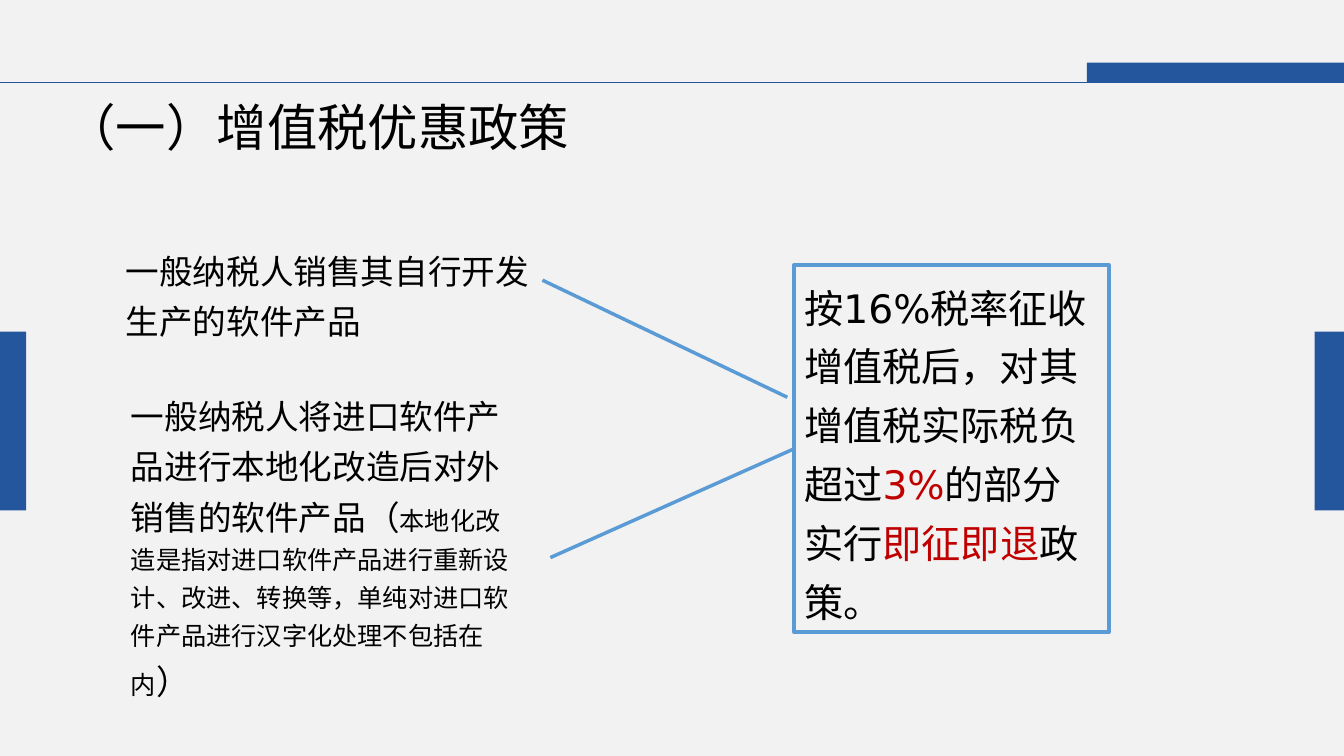
from lxml.etree import SubElement
from pptx import Presentation
from pptx.dml.color import RGBColor
from pptx.enum.shapes import MSO_CONNECTOR, MSO_SHAPE
from pptx.enum.text import MSO_ANCHOR, MSO_AUTO_SIZE, PP_ALIGN
from pptx.oxml.ns import qn
from pptx.util import Cm, Pt

COLORS = {
    "background": "F2F2F2",
    "band": "24569D",
    "outline": "5B9BD5",
    "text": "000000",
    "accent": "C00000",
}
FONT = "DejaVu Sans"
WIDTH, HEIGHT = 33.87, 19.05


def color(name):
    """Return the named colour."""
    return RGBColor.from_string(COLORS[name])


def add_rectangle(page, left, top, width, height):
    """Add a plain rectangle without shadow."""
    box = page.shapes.add_shape(
        MSO_SHAPE.RECTANGLE, Cm(left), Cm(top), Cm(width), Cm(height))
    box.shadow.inherit = False
    return box


def add_band(page, left, top, width, height):
    """Add a solid blue band without outline."""
    band = add_rectangle(page, left, top, width, height)
    band.fill.solid()
    band.fill.fore_color.rgb = color("band")
    band.line.fill.background()


def add_line(page, start, end, tint, weight):
    """Add a straight line between two points."""
    line = page.shapes.add_connector(
        MSO_CONNECTOR.STRAIGHT, Cm(start[0]), Cm(start[1]), Cm(end[0]), Cm(end[1]))
    line.line.color.rgb = color(tint)
    line.line.width = Pt(weight)
    SubElement(line._element.spPr, qn("a:effectLst"))
    return line


def write_runs(box, runs, spacing=1.25, wrap=True):
    """Fill a box with one paragraph of (text, size, colour) runs."""
    frame = box.text_frame
    frame.word_wrap = wrap
    frame.auto_size = MSO_AUTO_SIZE.SHAPE_TO_FIT_TEXT
    para = frame.paragraphs[0]
    para.alignment = PP_ALIGN.LEFT
    para.line_spacing = spacing
    for text, size, tint in runs:
        span = para.add_run()
        span.text = text
        span.font.name = FONT
        span.font.size = Pt(size)
        span.font.color.rgb = color(tint)


def add_text(page, left, top, width, height, runs, **layout):
    """Add a text box holding the given runs."""
    box = page.shapes.add_textbox(Cm(left), Cm(top), Cm(width), Cm(height))
    write_runs(box, runs, **layout)


def draw_frame(page, width):
    """Draw the header band, its rule and the two side bands."""
    rule_top, band_width, band_height = 2.08, 6.48, 0.5
    add_band(page, width - band_width, rule_top - band_height, band_width, band_height)
    add_line(page, (0, rule_top), (width, rule_top), "band", 0.5)
    side_width = 0.74
    for left in (-0.08, width - side_width):
        add_band(page, left, 8.36, side_width, 4.5)


def draw_title(page, left, top, width, height):
    """Write the section title."""
    add_text(page, left, top, width, height,
             [("（一）增值税优惠政策", 36, "text")], spacing=1.0, wrap=False)


def draw_cases(page, left, top, width):
    """Write the two cases that qualify for the refund."""
    add_text(page, left, top, width, 2.82,
             [("一般纳税人销售其自行开发生产的软件产品", 24, "text")])
    add_text(page, left + 0.13, top + 3.66, width - 0.36, 7.32, [
        ("一般纳税人将进口软件产品进行本地化改造后对外销售的软件产品（", 24, "text"),
        ("本地化改造是指对进口软件产品进行重新设计、改进、转换等，"
         "单纯对进口软件产品进行汉字化处理不包括在内", 18, "text"),
        ("）", 24, "text"),
    ])


def draw_policy(page, left, top, width, height):
    """Draw the outlined policy box and return it."""
    box = add_rectangle(page, left, top, width, height)
    box.fill.background()
    box.line.color.rgb = color("outline")
    box.line.width = Pt(3)
    box.text_frame.vertical_anchor = MSO_ANCHOR.MIDDLE
    write_runs(box, [
        ("按16%税率征收增值税后，对其增值税实际税负超过", 28, "text"),
        ("3%", 28, "accent"),
        ("的部分实行", 28, "text"),
        ("即征即退", 28, "accent"),
        ("政策。", 28, "text"),
    ])
    return box


def draw_links(page, policy, left, top):
    """Lead both cases to the policy box."""
    add_line(page, (left, top), (left + 6.17, top + 2.95), "outline", 2.5)
    start = (left + 0.2, top + 6.99)
    link = add_line(page, start, start, "outline", 2.5)
    link.end_connect(policy, 1)


def main():
    """Build and save the slide."""
    deck = Presentation()
    deck.slide_width, deck.slide_height = Cm(WIDTH), Cm(HEIGHT)
    page = deck.slides.add_slide(deck.slide_layouts[6])
    page.background.fill.solid()
    page.background.fill.fore_color.rgb = color("background")
    draw_frame(page, WIDTH)
    draw_title(page, 1.4, 2.31, 13.34, 1.8)
    policy = draw_policy(page, 20.02, 6.68, 7.92, 9.25)
    draw_cases(page, 2.92, 5.94, 10.72)
    draw_links(page, policy, 13.67, 7.06)
    deck.save("out.pptx")


if __name__ == "__main__":
    main()
